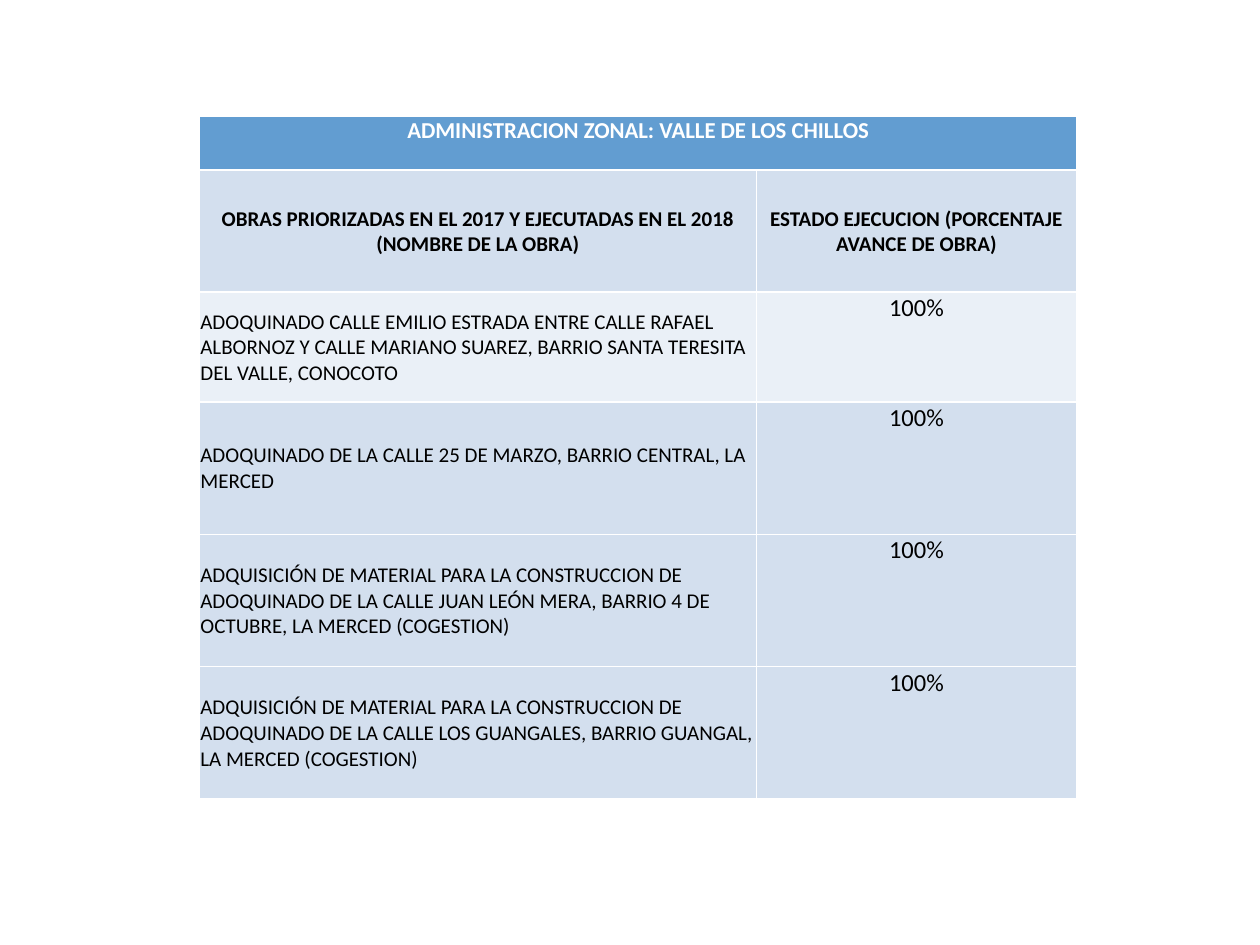
from lxml import etree
from pptx import Presentation
from pptx.dml.color import RGBColor
from pptx.enum.text import MSO_ANCHOR, PP_ALIGN
from pptx.oxml.ns import qn
from pptx.util import Cm, Pt

LEFT, CENTER = PP_ALIGN.LEFT, PP_ALIGN.CENTER
TOP, MIDDLE = MSO_ANCHOR.TOP, MSO_ANCHOR.MIDDLE

WHITE = RGBColor(0xFF, 0xFF, 0xFF)
BLACK = RGBColor(0x00, 0x00, 0x00)
BLUE = RGBColor(0x62, 0x9D, 0xD1)
LIGHT = RGBColor(0xD3, 0xDF, 0xEE)
PALE = RGBColor(0xEA, 0xF0, 0xF7)

COL_WIDTHS = [11.23, 6.45]
ROW_HEIGHTS = [1.09, 2.46, 2.21, 2.67, 2.67, 2.67]
WORKS = [
    "ADOQUINADO CALLE EMILIO ESTRADA ENTRE CALLE RAFAEL ALBORNOZ Y CALLE "
    "MARIANO SUAREZ, BARRIO SANTA TERESITA DEL VALLE, CONOCOTO",
    "ADOQUINADO DE LA CALLE 25 DE MARZO, BARRIO CENTRAL, LA MERCED",
    "ADQUISICIÓN DE MATERIAL PARA LA CONSTRUCCION DE ADOQUINADO DE LA CALLE "
    "JUAN LEÓN MERA, BARRIO 4 DE OCTUBRE, LA MERCED (COGESTION)",
    "ADQUISICIÓN DE MATERIAL PARA LA CONSTRUCCION DE ADOQUINADO DE LA CALLE "
    "LOS GUANGALES, BARRIO GUANGAL, LA MERCED (COGESTION)",
]


def set_borders(cell, widths):
    tcPr = cell._tc.get_or_add_tcPr()
    for i, (side, width) in enumerate(zip("LRTB", widths)):
        ln = etree.Element(qn(f"a:ln{side}"), w=str(Pt(width)))
        fill = etree.SubElement(ln, qn("a:solidFill"))
        etree.SubElement(fill, qn("a:srgbClr"), val=str(WHITE))
        tcPr.insert(i, ln)


def fill_cell(cell, text, size, color, bold, align, anchor):
    cell.vertical_anchor = anchor
    p = cell.text_frame.paragraphs[0]
    p.alignment = align
    r = p.add_run()
    r.text = text
    r.font.name = "Calibri"
    r.font.size = Pt(size)
    r.font.bold = bold
    r.font.color.rgb = color


prs = Presentation()
prs.slide_width, prs.slide_height = Cm(25.4), Cm(19.05)
s = prs.slides.add_slide(prs.slide_layouts[6])

# Table grid
table = s.shapes.add_table(
    len(ROW_HEIGHTS), len(COL_WIDTHS), Cm(4.02), Cm(2.34),
    Cm(sum(COL_WIDTHS)), Cm(sum(ROW_HEIGHTS))).table
for col, width in zip(table.columns, COL_WIDTHS):
    col.width = Cm(width)
for row, height in zip(table.rows, ROW_HEIGHTS):
    row.height = Cm(height)

# Fills, margins and borders
row_fills = [BLUE, LIGHT, PALE, LIGHT, LIGHT, LIGHT]
for i, (row, color) in enumerate(zip(table.rows, row_fills)):
    for cell in row.cells:
        cell.margin_left = cell.margin_right = cell.margin_top = Cm(0.02)
        cell.margin_bottom = 0
        set_borders(cell, (1, 1, 1.5 if i == 1 else 1, 1.5 if i == 0 else 1))
        cell.fill.solid()
        cell.fill.fore_color.rgb = color

# Title row
table.cell(0, 0).merge(table.cell(0, 1))
fill_cell(table.cell(0, 0), "ADMINISTRACION ZONAL: VALLE DE LOS CHILLOS",
          13, WHITE, True, CENTER, TOP)

# Column headings
headings = ["OBRAS PRIORIZADAS EN EL 2017 Y EJECUTADAS EN EL 2018 (NOMBRE DE LA OBRA)",
            "ESTADO EJECUCION (PORCENTAJE AVANCE DE OBRA)"]
for j, heading in enumerate(headings):
    fill_cell(table.cell(1, j), heading, 12, BLACK, True, CENTER, MIDDLE)

# Works and their progress
for i, work in enumerate(WORKS, start=2):
    fill_cell(table.cell(i, 0), work, 12, BLACK, False, LEFT, MIDDLE)
    fill_cell(table.cell(i, 1), "100%", 14, BLACK, False, CENTER, TOP)

prs.save("out.pptx")
